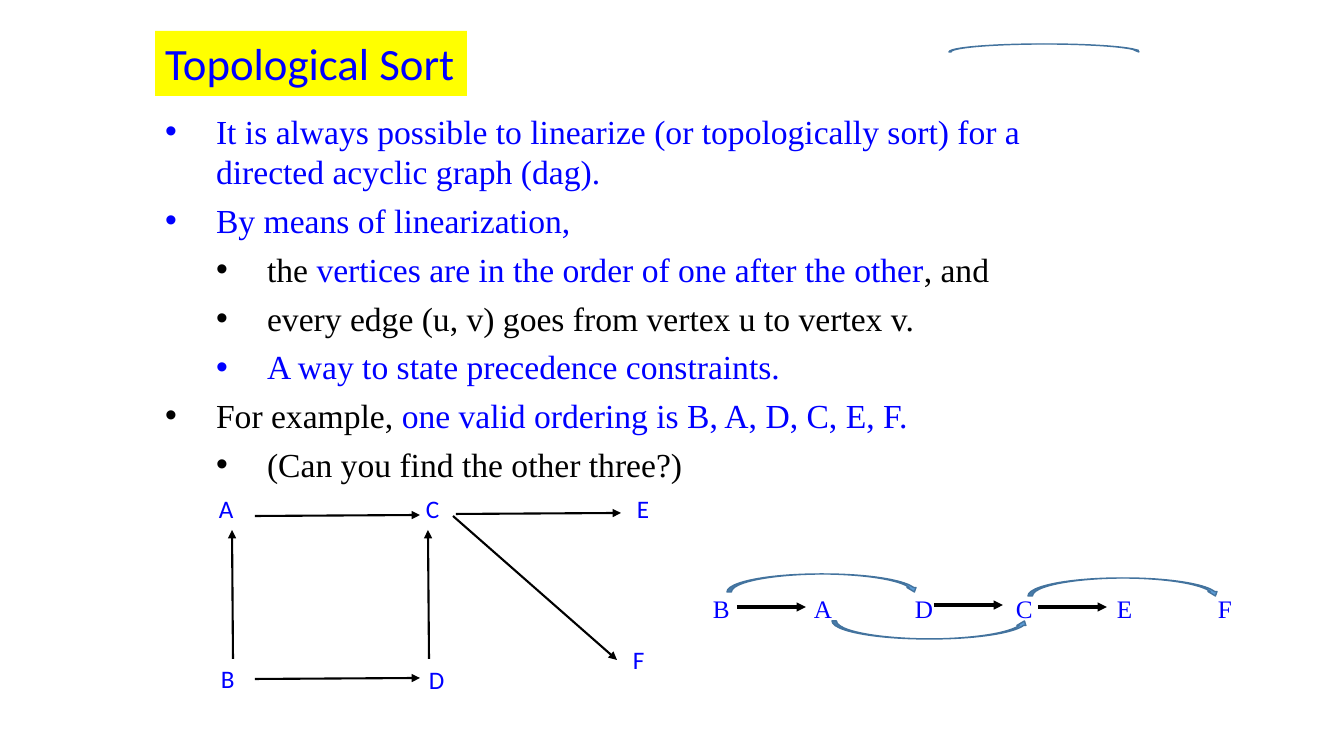
import pptx
import pptx.dml.color
import pptx.enum.shapes
import pptx.enum.text
import pptx.oxml.ns
import pptx.util
from lxml import etree

EMU_PER_PX = 914400 / 100.8
SANS, SERIF = "Calibri", "Times New Roman"
BLUE, BLACK, YELLOW = "0000FF", "000000", "FFFF00"
ARC_FILL, ARC_LINE = "5B9BD5", "43739E"


def px(length):
    return pptx.util.Emu(round(length * EMU_PER_PX))


def color(hex_text):
    return pptx.dml.color.RGBColor.from_string(hex_text)


def add_child(parent, tag, **attributes):
    return etree.SubElement(parent, pptx.oxml.ns.qn(tag), **attributes)


class SlideBuilder:
    LIST_INDENT = 51
    TAB_STEP = 101

    def __init__(self, slide):
        self.slide = slide

    def place(self, shape, left, top, width, height):
        shape.left, shape.top = px(left), px(top)
        shape.width, shape.height = px(width), px(height)

    def set_frame(self, frame, wrap=True, grow=True):
        sizes = pptx.enum.text.MSO_AUTO_SIZE
        frame.word_wrap = wrap
        frame.auto_size = sizes.SHAPE_TO_FIT_TEXT if grow else sizes.NONE
        frame.vertical_anchor = pptx.enum.text.MSO_ANCHOR.TOP

    def add_run(self, paragraph, text, font, size, hex_text):
        run = paragraph.add_run()
        run.text = text
        run.font.name = font
        run.font.size = pptx.util.Pt(size)
        run.font.color.rgb = color(hex_text)

    def title(self, text, *box):
        shape = self.slide.shapes.title
        self.place(shape, *box)
        shape.fill.solid()
        shape.fill.fore_color.rgb = color(YELLOW)
        self.set_frame(shape.text_frame, wrap=False, grow=False)
        paragraph = shape.text_frame.paragraphs[0]
        paragraph.alignment = pptx.enum.text.PP_ALIGN.LEFT
        self.add_run(paragraph, text, SANS, 32, BLUE)

    def bullets(self, items, *box):
        """Fill the body placeholder; each item is a level and its coloured runs."""
        shape = self.slide.placeholders[1]
        self.place(shape, *box)
        frame = shape.text_frame
        self.set_frame(frame)
        for index, (level, runs) in enumerate(items):
            paragraph = frame.add_paragraph() if index else frame.paragraphs[0]
            properties = paragraph._p.get_or_add_pPr()
            properties.set("marL", str(px(self.LIST_INDENT * (level + 1))))
            properties.set("indent", str(px(-self.LIST_INDENT)))
            add_child(properties, "a:buFont", typeface="Arial")
            add_child(properties, "a:buChar", char="•")
            paragraph.level = level
            paragraph.space_before = pptx.util.Pt(0)
            paragraph.space_after = pptx.util.Pt(6)
            for text, hex_text in runs:
                self.add_run(paragraph, text, SERIF, 24, hex_text)

    def label(self, text, font, *box):
        """Add a text box, with evenly spaced stops for any tabs in its text."""
        shape = self.slide.shapes.add_textbox(*map(px, box))
        self.set_frame(shape.text_frame)
        paragraph = shape.text_frame.paragraphs[0]
        if "\t" in text:
            stops = add_child(paragraph._p.get_or_add_pPr(), "a:tabLst")
            for number in range(1, text.count("\t") + 1):
                add_child(stops, "a:tab", pos=str(px(self.TAB_STEP * number)), algn="l")
        self.add_run(paragraph, text, font, 18, BLUE)

    def arrow(self, width, *ends):
        connector = self.slide.shapes.add_connector(
            pptx.enum.shapes.MSO_CONNECTOR.STRAIGHT, *map(px, ends))
        connector.line.color.rgb = color(BLACK)
        connector.line.width = pptx.util.Pt(width)
        add_child(connector.line._get_or_add_ln(), "a:tailEnd", type="triangle")
        add_child(connector._element.spPr, "a:effectLst")

    def arc(self, *box, below=False):
        shape = self.slide.shapes.add_shape(
            pptx.enum.shapes.MSO_SHAPE.CURVED_DOWN_ARROW, *map(px, box))
        shape.shadow.inherit = False
        shape.fill.solid()
        shape.fill.fore_color.rgb = color(ARC_FILL)
        shape.line.color.rgb = color(ARC_LINE)
        shape.line.width = pptx.util.Pt(1)
        if below:
            shape._element.spPr.find(pptx.oxml.ns.qn("a:xfrm")).set("flipV", "1")


BULLETS = [
    (0, [("It is always possible to linearize (or topologically sort) for a "
          "directed acyclic graph (dag).", BLUE)]),
    (0, [("By means of linearization,", BLUE)]),
    (1, [("the ", BLACK),
         ("vertices are in the order of one after the other", BLUE),
         (", and", BLACK)]),
    (1, [("every edge (u, v) goes from vertex u to vertex v.", BLACK)]),
    (1, [("A way to state precedence constraints.", BLUE)]),
    (0, [("For example, ", BLACK),
         ("one valid ordering is B, A, D, C, E, F.", BLUE)]),
    (1, [("(Can you find the other three?)", BLACK)]),
]
VERTICES = {"A": (209, 488), "C": (416, 488), "E": (627, 488),
            "B": (211, 658), "D": (419, 659), "F": (623, 639)}
GRAPH_EDGES = [(255, 516, 420, 515), (456, 514, 621, 513), (255, 679, 420, 678),
               (233, 659, 232, 530), (429, 659, 428, 530), (453, 516, 617, 660)]
ORDER_EDGES = [(737, 607), (934, 605), (1038, 607)]
ARCS_ABOVE = [(727, 574, 192, 18), (949, 44, 192, 8), (1028, 578, 192, 18)]


def main():
    presentation = pptx.Presentation()
    presentation.slide_width, presentation.slide_height = px(1344), px(756)
    slide = presentation.slides.add_slide(presentation.slide_layouts[1])
    builder = SlideBuilder(slide)

    builder.title("Topological Sort", 155, 31, 312, 65)
    builder.bullets(BULLETS, 155, 106, 985, 387)

    for edge in GRAPH_EDGES:
        builder.arrow(1.5, *edge)
    for name, (left, top) in VERTICES.items():
        builder.label(name, SANS, left, top, 33, 41)

    builder.label("B\tA\tD\tC\tE \tF", SERIF, 703, 588, 555, 40)
    for left, top in ORDER_EDGES:
        builder.arrow(2.25, left, top, left + 69, top)
    for box in ARCS_ABOVE:
        builder.arc(*box)
    builder.arc(832, 621, 197, 18, below=True)

    presentation.save("out.pptx")


if __name__ == "__main__":
    main()
